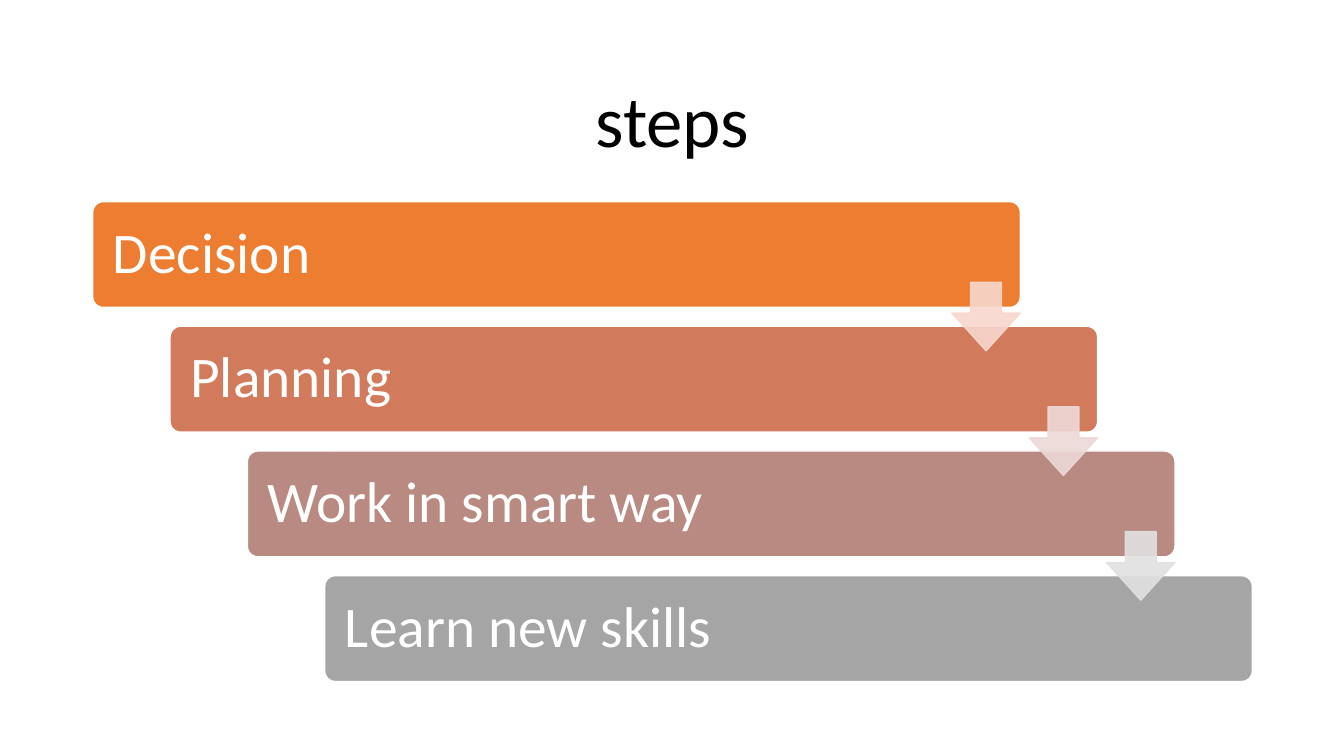
from lxml import etree
from pptx import Presentation
from pptx.dml.color import RGBColor
from pptx.enum.shapes import MSO_SHAPE as Shape
from pptx.enum.text import MSO_ANCHOR as Anchor, PP_ALIGN as Align
from pptx.oxml.ns import qn
from pptx.util import Inches, Pt

LEFT, TOP = 0.92, 2
COLUMN_STEP, ROW_STEP = 0.767, 1.237
BAR_WIDTH, BAR_HEIGHT = 9.2, 1.05
ARROW_SIZE, ARROW_DROP = 0.68, 0.8
STEPS = [
    ("Decision", "ED7D31", "F8D7CE"),
    ("Planning", "D17B5C", "EDD9D7"),
    ("Work in smart way", "B98A82", "E1E1E1"),
    ("Learn new skills", "A5A5A5", None),
]


def paint(color_format, color, opacity=100):
    color_format.rgb = RGBColor.from_string(color)
    if opacity < 100:
        for element in color_format._xFill.iter(qn("a:srgbClr")):
            etree.SubElement(element, qn("a:alpha"), val=str(opacity * 1000))


def write(shape, text, size, color, align=Align.LEFT, inset=0.1):
    frame = shape.text_frame
    frame.word_wrap = True
    frame.vertical_anchor = Anchor.MIDDLE
    frame.margin_left = frame.margin_right = Inches(inset)
    paragraph = frame.paragraphs[0]
    paragraph.alignment = align
    paragraph.line_spacing = 0.9
    run = paragraph.add_run()
    run.text = text
    run.font.name = "Calibri"
    run.font.size = Pt(size)
    paint_font(run.font, color)


def paint_font(font, color):
    font.fill.solid()
    paint(font.fill.fore_color, color)


def add_block(slide, kind, box, adjustments, fill, line, opacity=100):
    shape = slide.shapes.add_shape(kind, *map(Inches, box))
    shape.shadow.inherit = False
    for index, value in enumerate(adjustments):
        shape.adjustments[index] = value
    shape.fill.solid()
    paint(shape.fill.fore_color, fill, opacity)
    shape.line.width = Pt(1)
    shape.line.fill.solid()
    paint(shape.line.fill.fore_color, line, opacity)
    return shape


def add_title(slide, text):
    title = slide.shapes.title
    title.left, title.top, title.width, title.height = map(Inches, (LEFT, 0.61, 11.5, 1.24))
    write(title, text, 52, "000000", align=Align.CENTER)


def add_bar(slide, row, text, color):
    box = (LEFT + row * COLUMN_STEP, TOP + row * ROW_STEP, BAR_WIDTH, BAR_HEIGHT)
    bar = add_block(slide, Shape.ROUNDED_RECTANGLE, box, [0.1], color, "FFFFFF")
    write(bar, text, 41, "FFFFFF", inset=0.17)


def add_arrow(slide, row, color):
    left = LEFT + row * COLUMN_STEP + BAR_WIDTH - ARROW_SIZE
    box = (left, TOP + row * ROW_STEP + ARROW_DROP, ARROW_SIZE, ARROW_SIZE)
    add_block(slide, Shape.DOWN_ARROW, box, [0.45, 0.55], color, color, opacity=90)


def main():
    presentation = Presentation()
    presentation.slide_width, presentation.slide_height = Inches(13.33), Inches(7.5)
    slide = presentation.slides.add_slide(presentation.slide_layouts[5])
    add_title(slide, "steps")
    for row, (text, color, _) in enumerate(STEPS):
        add_bar(slide, row, text, color)
    for row, (_, _, color) in enumerate(STEPS[:-1]):
        add_arrow(slide, row, color)
    presentation.save("out.pptx")


if __name__ == "__main__":
    main()
